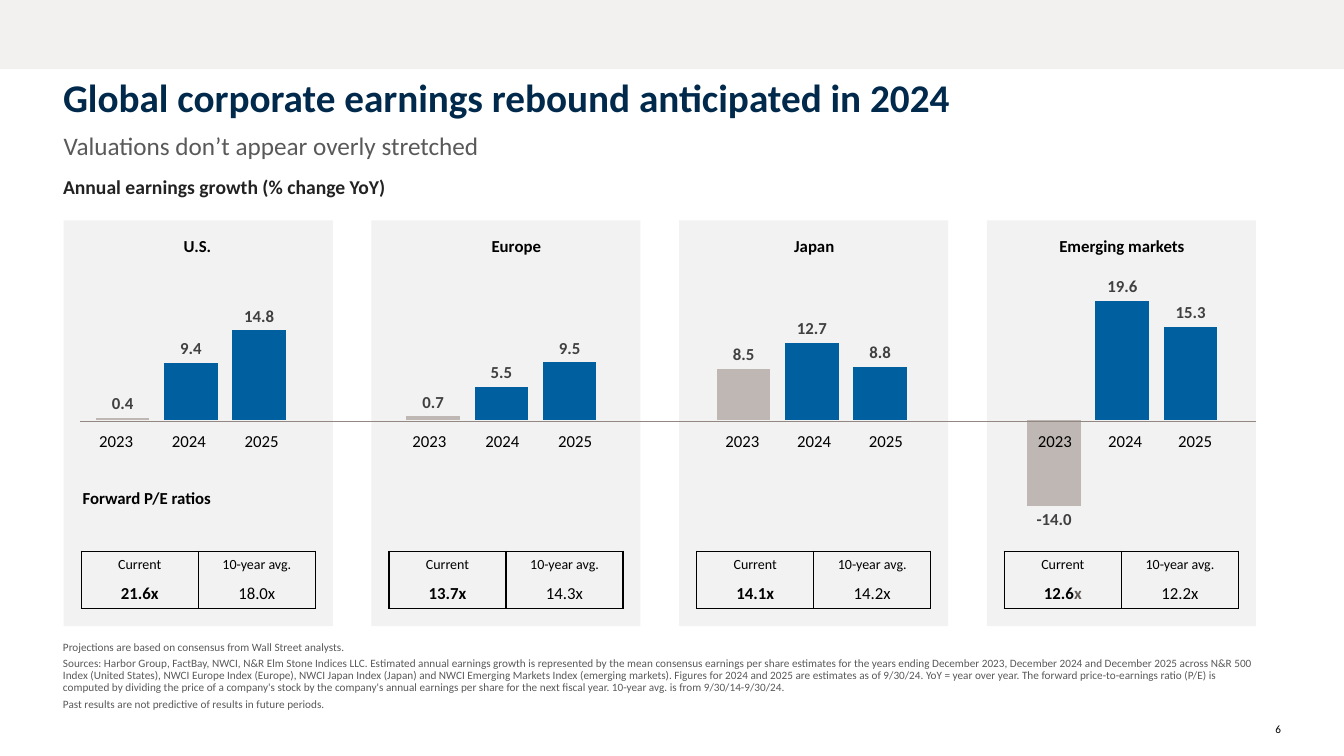
from lxml.etree import SubElement
from pptx import Presentation
from pptx.chart.data import CategoryChartData
from pptx.dml.color import RGBColor
from pptx.enum.chart import XL_CHART_TYPE as ChartType, XL_LABEL_POSITION as LabelPosition
from pptx.enum.shapes import MSO_CONNECTOR as Connector, MSO_SHAPE as Shape
from pptx.enum.text import MSO_ANCHOR as Anchor, PP_ALIGN as Align
from pptx.oxml import parse_xml
from pptx.oxml.ns import nsdecls, qn
from pptx.util import Pt

COLORS = {"band": "F2F1F0", "panel": "F2F2F2", "navy": "00294B", "gray": "595959",
          "dark": "222222", "black": "000000", "label": "404040", "axis": "938881",
          "past": "BEB7B3", "estimate": "005F9E", "muted": "635A55"}
FONT = "Calibri"
NO_STYLE = "{2D5ABB26-0587-4C30-8999-92F81FD0307C}"
YEARS = ["2023", "2024", "2025"]
GROWTH = {"2023": (0.4, 0.7, 8.5, -14.0), "2024": (9.4, 5.5, 12.7, 19.6),
          "2025": (14.8, 9.5, 8.8, 15.3)}
REGIONS = [
    {"name": "U.S.", "name_left": 30, "years_width": 156, "current": "21.6x", "average": "18.0x"},
    {"name": "Europe", "name_left": 38, "years_width": 156, "current": "13.7x", "average": "14.3x"},
    {"name": "Japan", "name_left": 31, "years_width": 154, "current": "14.1x", "average": "14.2x"},
    {"name": "Emerging markets", "name_left": 31, "years_width": 150.5, "current": "12.6",
     "suffix": "x", "average": "12.2x"},
]
FOOTNOTES = [
    "Projections are based on consensus from Wall Street analysts.",
    "Sources: Harbor Group, FactBay, NWCI, N&R Elm Stone Indices LLC. Estimated annual earnings "
    "growth is represented by the mean consensus earnings per share estimates for the years ending "
    "December 2023, December 2024 and December 2025 across N&R 500 Index (United States), NWCI "
    "Europe Index (Europe), NWCI Japan Index (Japan) and NWCI Emerging Markets Index (emerging "
    "markets). Figures for 2024 and 2025 are estimates as of 9/30/24. YoY = year over year. The "
    "forward price-to-earnings ratio (P/E) is computed by dividing the price of a company's stock "
    "by the company's annual earnings per share for the next fiscal year. 10-year avg. is from "
    "9/30/14-9/30/24.",
    "Past results are not predictive of results in future periods.",
]


def rgb(name):
    """Return the named colour."""
    return RGBColor.from_string(COLORS[name])


def write(paragraph, text, size=12, bold=False, color="black", align=Align.LEFT,
          before=0, after=0, line=1.0):
    """Add a formatted run to a paragraph and set the paragraph's spacing."""
    run = paragraph.add_run()
    run.text = text
    run.font.name, run.font.size, run.font.bold = FONT, Pt(size), bold
    run.font.color.rgb = rgb(color)
    paragraph.alignment, paragraph.line_spacing = align, line
    paragraph.space_before, paragraph.space_after = Pt(before), Pt(after)


def prepare_frame(shape, anchor=Anchor.TOP):
    """Give a shape a wrapping text frame without margins."""
    frame = shape.text_frame
    frame.word_wrap, frame.vertical_anchor = True, anchor
    frame.margin_left = frame.margin_right = frame.margin_top = frame.margin_bottom = 0
    return frame


def add_text(slide, box, *lines, anchor=Anchor.TOP, **style):
    """Add a text box with one paragraph for each line."""
    frame = prepare_frame(slide.shapes.add_textbox(*map(Pt, box)), anchor)
    for index, text in enumerate(lines):
        write(frame.add_paragraph() if index else frame.paragraphs[0], text, **style)


def add_block(slide, box, color):
    """Add a plain filled rectangle."""
    shape = slide.shapes.add_shape(Shape.RECTANGLE, *map(Pt, box))
    shape.shadow.inherit = False
    shape.fill.solid()
    shape.fill.fore_color.rgb = rgb(color)
    shape.line.fill.background()


def add_row(slide, box, columns, bordered=False):
    """Add an unstyled one-row table and return its cells."""
    table = slide.shapes.add_table(1, columns, *map(Pt, box)).table
    table.first_row = table.horz_banding = False
    table._tbl.tblPr.find(qn("a:tableStyleId")).text = NO_STYLE
    cells = list(table.rows[0].cells)
    for cell in cells:
        if bordered:
            properties = cell._tc.get_or_add_tcPr()
            for side in ("lnL", "lnR", "lnT", "lnB"):
                border = SubElement(properties, qn(f"a:{side}"), w=str(Pt(1)))
                fill = SubElement(border, qn("a:solidFill"))
                SubElement(fill, qn("a:srgbClr"), val=COLORS["black"])
        cell.fill.background()
    return cells


def add_heading(slide, box):
    """Place the title, the subtitle and the chart heading."""
    left, top, width = box
    title = slide.shapes.title
    title.left, title.top, title.width, title.height = map(Pt, (left, top, width, 31))
    write(prepare_frame(title).paragraphs[0], "Global corporate earnings rebound anticipated in 2024",
          size=28, bold=True, color="navy", line=0.95)
    add_text(slide, (left + 0.5, top + 38, width, 30), "Valuations don’t appear overly stretched",
             size=18, color="gray")
    add_text(slide, (left, top + 70.5, 555, 17), "Annual earnings growth (% change YoY)",
             size=14, bold=True, color="dark")


def add_growth_chart(slide, box):
    """Add the clustered columns for all four regions."""
    data = CategoryChartData(number_format="0.0")
    data.categories = [region["name"] for region in REGIONS]
    for year in YEARS:
        data.add_series(year, GROWTH[year])
    chart = slide.shapes.add_chart(ChartType.COLUMN_CLUSTERED, *map(Pt, box), data).chart
    chart.has_legend = chart.has_title = False
    chart.font.name, chart.font.size = FONT, Pt(10)
    chart.font.color.rgb = rgb("black")
    chart.value_axis.minimum_scale, chart.value_axis.maximum_scale = -20, 25
    chart.value_axis.has_major_gridlines = False
    chart.value_axis.visible = chart.category_axis.visible = False
    plot = chart.plots[0]
    plot.gap_width, plot.overlap, plot.vary_by_categories = 224, -27, False
    for series, color in zip(plot.series, ("past", "estimate", "estimate")):
        series.invert_if_negative = False
        series.format.fill.solid()
        series.format.fill.fore_color.rgb = rgb(color)
        labels = series.data_labels
        labels.show_value, labels.position = True, LabelPosition.OUTSIDE_END
        labels.number_format, labels.number_format_is_linked = "0.0", False
        labels.font.name, labels.font.size, labels.font.bold = FONT, Pt(12), True
        labels.font.color.rgb = rgb("label")
    body = chart._chartSpace.find(qn("c:chart"))
    body.addnext(parse_xml(f'<c:spPr {nsdecls("c", "a")}><a:noFill/><a:ln><a:noFill/></a:ln></c:spPr>'))
    area = body.find(qn("c:plotArea"))
    for layout in area.findall(qn("c:layout")):
        area.remove(layout)
    layout = parse_xml(f'<c:layout {nsdecls("c")}><c:manualLayout/></c:layout>')
    for tag, value in (("layoutTarget", "inner"), ("xMode", "edge"), ("yMode", "edge"),
                       ("x", "0.012"), ("y", "0.109"), ("w", "0.975"), ("h", "0.849")):
        SubElement(layout[0], qn(f"c:{tag}"), val=value)
    area.insert(0, layout)


def add_region(slide, box, region, years_left):
    """Place a region's name, years and price-to-earnings table on its panel."""
    left, top, width, height = box
    add_text(slide, (left + region["name_left"], top + 11, 131, 14), region["name"],
             bold=True, align=Align.CENTER)
    years_box = (left + years_left, top + 147, region["years_width"], 29.5)
    for cell, year in zip(add_row(slide, years_box, len(YEARS)), YEARS):
        write(cell.text_frame.paragraphs[0], year, align=Align.CENTER)
    ratio_box = (left + 12.5, top + 236.25, width - 25, 41)
    cells = add_row(slide, ratio_box, 2, bordered=True)
    for cell, key, heading in zip(cells, ("current", "average"), ("Current", "10-year avg.")):
        write(cell.text_frame.paragraphs[0], heading, size=10, align=Align.CENTER)
        ratio = cell.text_frame.add_paragraph()
        style = {"bold": key == "current", "align": Align.CENTER, "before": 6, "line": 1.1}
        write(ratio, region[key], **style)
        if key == "current" and "suffix" in region:
            write(ratio, region["suffix"], color="muted", **style)


def add_baseline(slide, left, right, top):
    """Draw the zero line across all panels."""
    line = slide.shapes.add_connector(Connector.STRAIGHT, Pt(left), Pt(top), Pt(right), Pt(top))
    line.line.color.rgb, line.line.width = rgb("axis"), Pt(0.75)
    SubElement(line._element.spPr, qn("a:effectLst"))


def main():
    """Build and save the slide."""
    presentation = Presentation()
    presentation.slide_width, presentation.slide_height = Pt(960), Pt(540)
    slide = presentation.slides.add_slide(presentation.slide_layouts[5])
    add_block(slide, (0, 0, 960, 49.5), "band")
    add_heading(slide, (45, 54.75, 870))
    panels = [(45.5 + 219.8 * index, 157.5, 192.25, 289.75) for index in range(len(REGIONS))]
    for panel in panels:
        add_block(slide, panel, "panel")
    add_growth_chart(slide, (14.5, 166.25, 910, 231))
    for index, (panel, region) in enumerate(zip(panels, REGIONS)):
        add_region(slide, panel, region, 11.5 + 4 * index)
    add_baseline(slide, 57, 897, 301)
    add_text(slide, (59, 348.5, 202, 14), "Forward P/E ratios", bold=True)
    add_text(slide, (45, 449.5, 852.5, 58), *FOOTNOTES, anchor=Anchor.BOTTOM,
             size=8, color="gray", after=3, line=0.9)
    add_text(slide, (859, 515.5, 56, 10), "6", anchor=Anchor.BOTTOM, size=8, align=Align.RIGHT)
    presentation.save("out.pptx")


if __name__ == "__main__":
    main()
